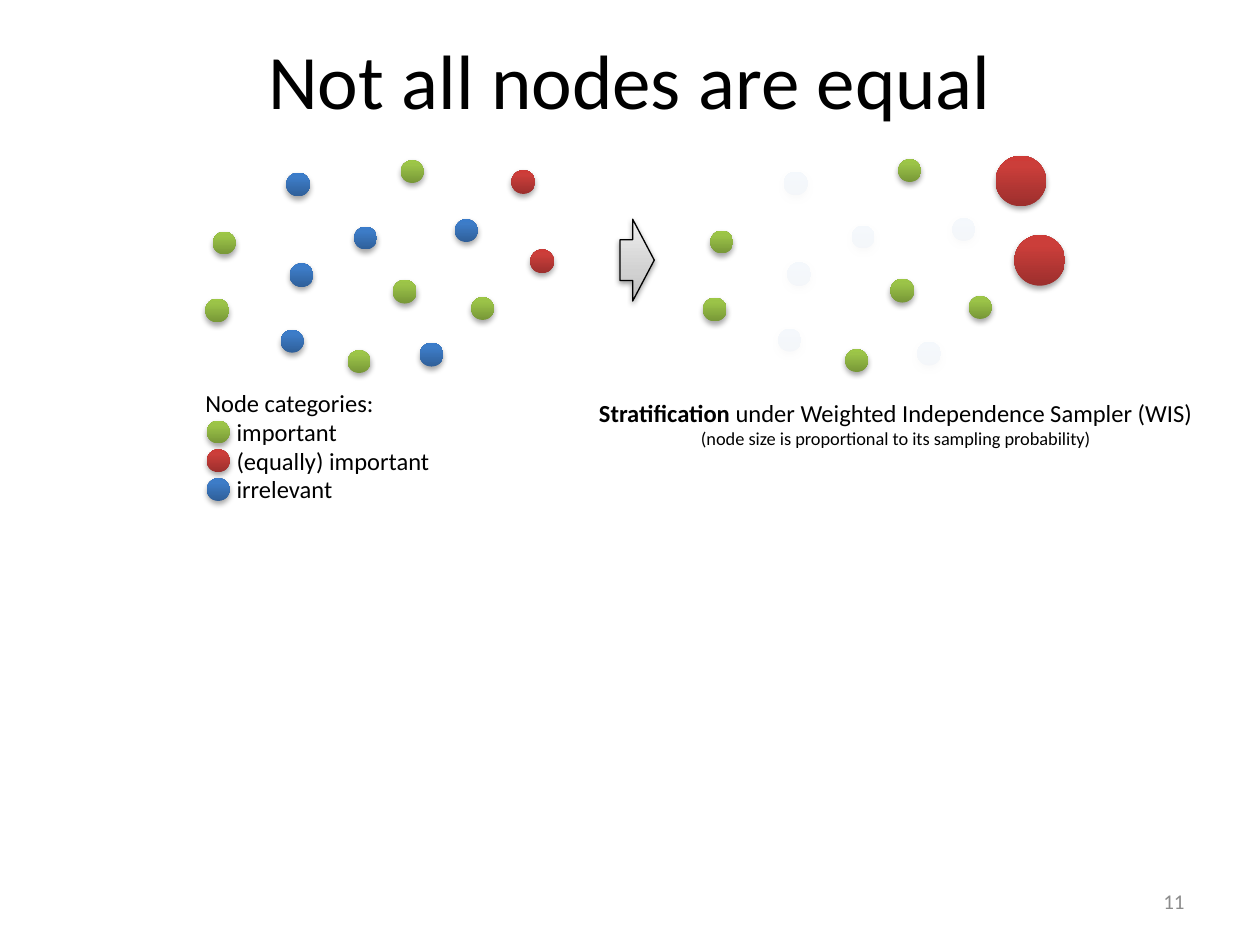
import lxml.etree
import pptx
import pptx.dml.color
import pptx.enum.shapes
import pptx.enum.text
import pptx.oxml.ns
import pptx.util

Cm = pptx.util.Cm
Pt = pptx.util.Pt
RGBColor = pptx.dml.color.RGBColor
ShapeKind = pptx.enum.shapes.MSO_SHAPE
Align = pptx.enum.text.PP_ALIGN
Anchor = pptx.enum.text.MSO_ANCHOR
qn = pptx.oxml.ns.qn

BLACK = RGBColor(0x00, 0x00, 0x00)
WHITE = RGBColor(0xFF, 0xFF, 0xFF)
GRAY = RGBColor(0x8C, 0x8C, 0x8C)
BLUE_STOPS = ((0, RGBColor(0x2F, 0x5F, 0x99)), (80, RGBColor(0x3D, 0x7C, 0xC7)),
              (100, RGBColor(0x3A, 0x7C, 0xCB)))
GREEN_STOPS = ((0, RGBColor(0x77, 0x97, 0x37)), (80, RGBColor(0x9B, 0xC3, 0x48)),
               (100, RGBColor(0x9D, 0xC7, 0x46)))
RED_STOPS = ((0, RGBColor(0x9C, 0x2F, 0x2D)), (80, RGBColor(0xCB, 0x3E, 0x3A)),
             (100, RGBColor(0xCE, 0x3B, 0x37)))
ARROW_STOPS = ((0, RGBColor(0xBD, 0xBD, 0xBD)), (35, RGBColor(0xD1, 0xD1, 0xD1)),
               (100, RGBColor(0xEE, 0xEE, 0xEE)))

FONT = "Calibri"
SMALL, MEDIUM, LARGE = 0.46, 0.48, 1.02
IRRELEVANT_NODES = ((5.66, 6.65, SMALL), (5.84, 5.31, MEDIUM), (8.46, 6.91, MEDIUM),
                    (5.77, 3.48, MEDIUM), (9.17, 4.42, SMALL), (7.14, 4.57, SMALL))
GREEN_NODES = ((4.29, 4.67, SMALL), (4.14, 6.02, MEDIUM), (8.08, 3.23, SMALL),
               (7.01, 7.06, SMALL), (9.5, 5.99, SMALL), (7.92, 5.64, MEDIUM))
RED_NODES = ((10.69, 5.03, MEDIUM), (10.31, 3.43, MEDIUM))
SAMPLE_SHIFT = (10.03, -0.02)
LEGEND = (("important", GREEN_STOPS), ("(equally) important", RED_STOPS),
          ("irrelevant", BLUE_STOPS))
LEGEND_STEP = 0.58


def add_child(parent, tag, **attributes):
    child = lxml.etree.SubElement(parent, qn(tag))
    for name, value in attributes.items():
        child.set(name, str(value))
    return child


def add_plain_shape(page, kind, left, top, width, height):
    shape = page.shapes.add_shape(kind, Cm(left), Cm(top), Cm(width), Cm(height))
    shape.shadow.inherit = False
    shape.line.fill.background()
    return shape


def fill_gradient(shape, stops):
    shape.fill.gradient()
    shape.fill.gradient_angle = 90
    stop_list = shape.element.spPr.find(qn("a:gradFill")).find(qn("a:gsLst"))
    for old_stop in list(stop_list):
        stop_list.remove(old_stop)
    for percent, color in stops:
        stop = add_child(stop_list, "a:gs", pos=percent * 1000)
        add_child(stop, "a:srgbClr", val=color)


def add_shadow(shape, opacity, distance):
    effects = shape.element.spPr.find(qn("a:effectLst"))
    shadow = add_child(effects, "a:outerShdw", blurRad=Pt(3.15), dist=Pt(distance),
                       dir=5400000, rotWithShape=0)
    color = add_child(shadow, "a:srgbClr", val=BLACK)
    add_child(color, "a:alpha", val=opacity * 1000)


def add_node(page, left, top, size, stops):
    node = add_plain_shape(page, ShapeKind.OVAL, left, top, size, size)
    fill_gradient(node, stops)
    add_shadow(node, 35, 1.8)


def add_nodes(page, nodes, stops, shift=(0, 0), new_size=None):
    for left, top, size in nodes:
        drawn_size = new_size or size
        inset = (size - drawn_size) / 2
        add_node(page, left + shift[0] + inset, top + shift[1] + inset, drawn_size, stops)


def add_veil(page):
    veil = add_plain_shape(page, ShapeKind.RECTANGLE, 13.69, 3.1, 7.59, 4.65)
    veil.fill.solid()
    veil.fill.fore_color.rgb = WHITE
    color = veil.element.spPr.find(qn("a:solidFill")).find(qn("a:srgbClr"))
    add_child(color, "a:alpha", val=95000)


def add_arrow(page):
    arrow = add_plain_shape(page, ShapeKind.RIGHT_ARROW, 12.5, 4.42, 0.69, 1.65)
    arrow.adjustments[0] = 0.5
    arrow.adjustments[1] = 0.63
    fill_gradient(arrow, ARROW_STOPS)
    arrow.line.color.rgb = BLACK
    arrow.line.width = Pt(0.75)
    add_shadow(arrow, 38, 1.6)


def add_text(page, place, lines, align=Align.LEFT, anchor=Anchor.TOP, color=BLACK):
    box = page.shapes.add_textbox(*(Cm(length) for length in place))
    frame = box.text_frame
    frame.word_wrap = True
    frame.vertical_anchor = anchor
    frame.text = "\n".join(text for text, size in lines)
    for para, (text, size) in zip(frame.paragraphs, lines):
        para.alignment = align
        for span in para.runs:
            format_span(span, size, color)
    return box


def format_span(span, size, color, bold=False):
    span.font.name = FONT
    span.font.size = Pt(size)
    span.font.bold = bold
    span.font.color.rgb = color


def add_legend(page):
    for row, (label, stops) in enumerate(LEGEND):
        offset = row * LEGEND_STEP
        add_node(page, 4.17, 8.48 + offset, SMALL, stops)
        add_text(page, (4.52, 8.28 + offset, 4.98, 0.86), [(label, 14)])
    add_text(page, (3.89, 7.7, 4.65, 0.86), [("Node categories:", 14)])


def add_caption(page):
    box = add_text(page, (11.48, 7.9, 13.16, 1.3),
                   [("Stratification", 14),
                    ("(node size is proportional to its sampling probability)", 10.5)],
                   Align.CENTER)
    para = box.text_frame.paragraphs[0]
    para.runs[0].font.bold = True
    span = para.add_run()
    span.text = " under Weighted Independence Sampler (WIS)"
    format_span(span, 14, BLACK)


def main():
    deck = pptx.Presentation()
    deck.slide_width = Cm(25.4)
    deck.slide_height = Cm(19.05)
    page = deck.slides.add_slide(deck.slide_layouts[6])

    add_nodes(page, IRRELEVANT_NODES, BLUE_STOPS)
    add_nodes(page, GREEN_NODES, GREEN_STOPS)
    add_nodes(page, RED_NODES, RED_STOPS)

    add_nodes(page, IRRELEVANT_NODES, BLUE_STOPS, SAMPLE_SHIFT)
    add_veil(page)
    add_nodes(page, GREEN_NODES, GREEN_STOPS, SAMPLE_SHIFT)
    add_arrow(page)
    add_text(page, (1.27, 0, 22.86, 3.18), [("Not all nodes are equal", 44)],
             Align.CENTER, Anchor.MIDDLE)
    add_nodes(page, RED_NODES, RED_STOPS, SAMPLE_SHIFT, LARGE)

    add_legend(page)
    add_caption(page)
    add_text(page, (18.21, 17.65, 5.92, 1.02), [("11", 12)],
             Align.RIGHT, Anchor.MIDDLE, GRAY)
    deck.save("out.pptx")


if __name__ == "__main__":
    main()
